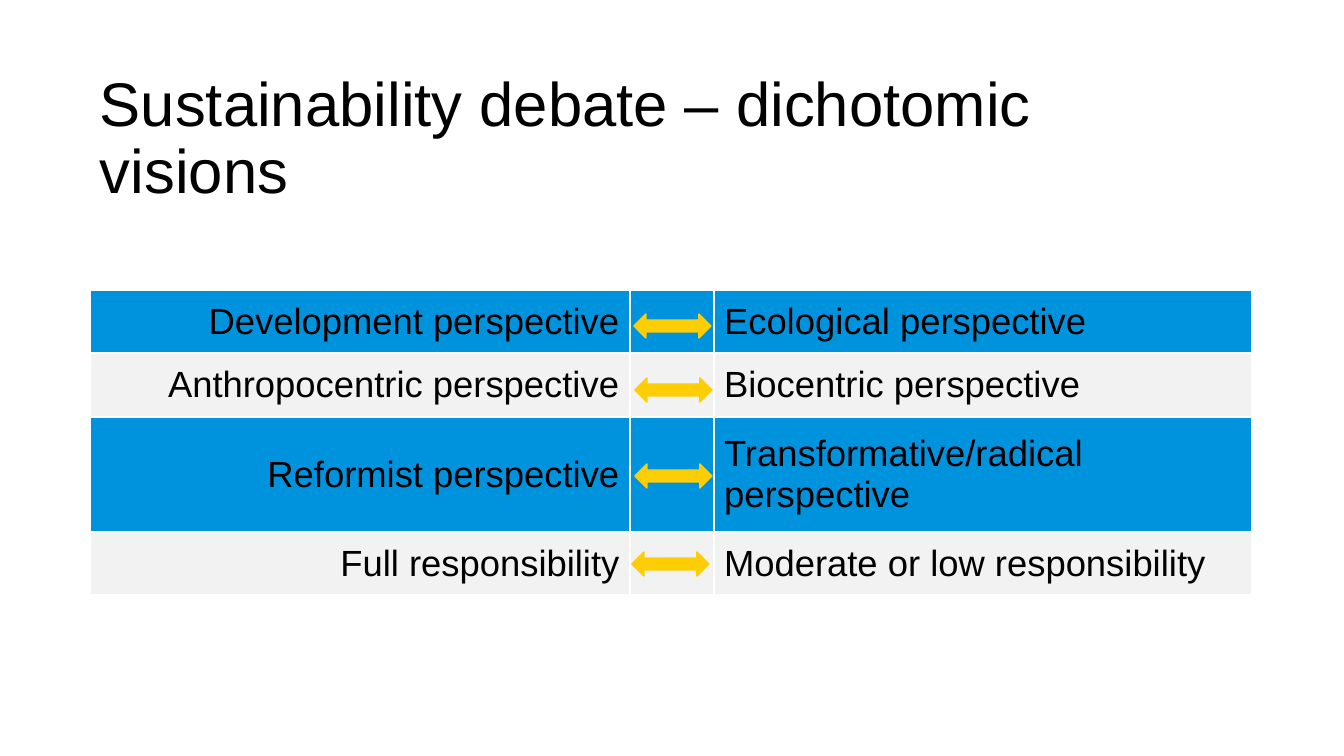
import pptx
import pptx.util
import pptx.dml.color
import pptx.enum.shapes
import pptx.enum.text
import pptx.oxml
import pptx.oxml.ns

BLACK = pptx.dml.color.RGBColor(0x00, 0x00, 0x00)
WHITE = pptx.dml.color.RGBColor(0xFF, 0xFF, 0xFF)
BLUE = pptx.dml.color.RGBColor(0x00, 0x93, 0xDD)
GREY = pptx.dml.color.RGBColor(0xF2, 0xF2, 0xF2)
YELLOW = pptx.dml.color.RGBColor(0xFD, 0xCD, 0x05)

ALIGN = pptx.enum.text.PP_ALIGN
MIDDLE = pptx.enum.text.MSO_ANCHOR.MIDDLE


def px(length):
    return round(length * 914400 / 100.8)


def add_run(paragraph, text, size):
    run = paragraph.add_run()
    run.text = text
    run.font.name = "Arial"
    run.font.size = pptx.util.Pt(size)
    run.font.color.rgb = BLACK


deck = pptx.Presentation()
deck.slide_width, deck.slide_height = px(1344), px(756)
slide = deck.slides.add_slide(deck.slide_layouts[6])

# Title
title = slide.shapes.add_textbox(px(90), px(67), px(1079), px(146)).text_frame
title.word_wrap = True
title.vertical_anchor = MIDDLE
title.paragraphs[0].line_spacing = 0.9
add_run(title.paragraphs[0], "Sustainability debate – dichotomic visions", 44)

# Table of opposing visions
visions = [
    ("Development perspective", "Ecological perspective"),
    ("Anthropocentric perspective", "Biocentric perspective"),
    ("Reformist perspective", "Transformative/radical perspective"),
    ("Full responsibility", "Moderate or low responsibility"),
]
widths = [540, 84, 538]
heights = [63, 64, 115, 63]
table = slide.shapes.add_table(
    len(visions), len(widths), px(90), px(290), px(sum(widths)), px(sum(heights))
).table
for column, width in zip(table.columns, widths):
    column.width = px(width)

for index, (left, right) in enumerate(visions):
    table.rows[index].height = px(heights[index])
    sides = [(left, ALIGN.RIGHT), ("", ALIGN.CENTER), (right, ALIGN.LEFT)]
    for cell, (text, alignment) in zip(table.rows[index].cells, sides):
        cell.vertical_anchor = MIDDLE
        paragraph = cell.text_frame.paragraphs[0]
        paragraph.alignment = alignment
        if text:
            add_run(paragraph, text, 26)
        # White borders come before the fill in the cell properties
        properties = cell._tc.get_or_add_tcPr()
        for edge in ("lnL", "lnR", "lnT", "lnB"):
            properties.append(pptx.oxml.parse_xml(
                f'<a:{edge} {pptx.oxml.ns.nsdecls("a")} w="12700"><a:solidFill>'
                f'<a:srgbClr val="{WHITE}"/></a:solidFill></a:{edge}>'
            ))
        cell.fill.solid()
        cell.fill.fore_color.rgb = GREY if index % 2 else BLUE

# Double arrows between the two sides
for left, top in [(634, 314), (635, 378), (635, 464), (632, 552)]:
    arrow = slide.shapes.add_shape(
        pptx.enum.shapes.MSO_SHAPE.LEFT_RIGHT_ARROW, px(left), px(top), px(77), px(24)
    )
    arrow.shadow.inherit = False
    arrow.fill.solid()
    arrow.fill.fore_color.rgb = YELLOW
    arrow.line.color.rgb = YELLOW
    arrow.line.width = pptx.util.Pt(1)

deck.save("out.pptx")
